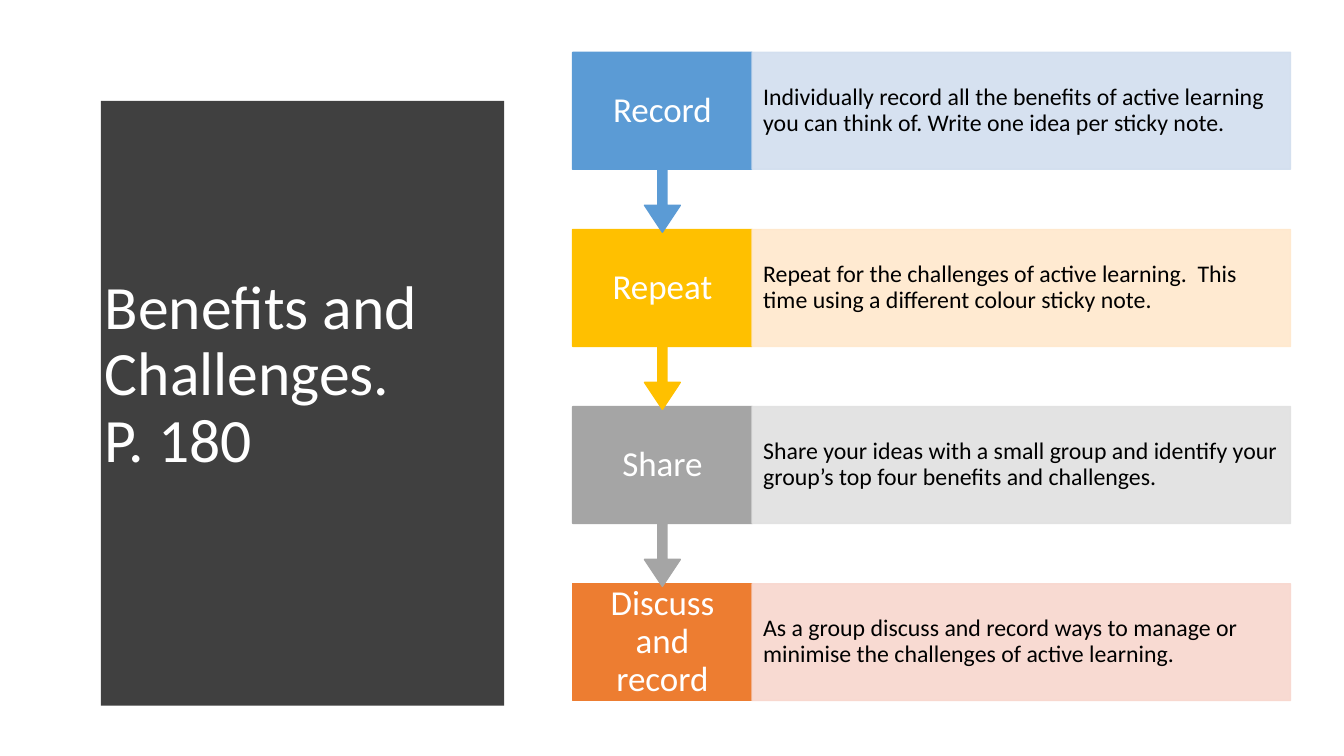
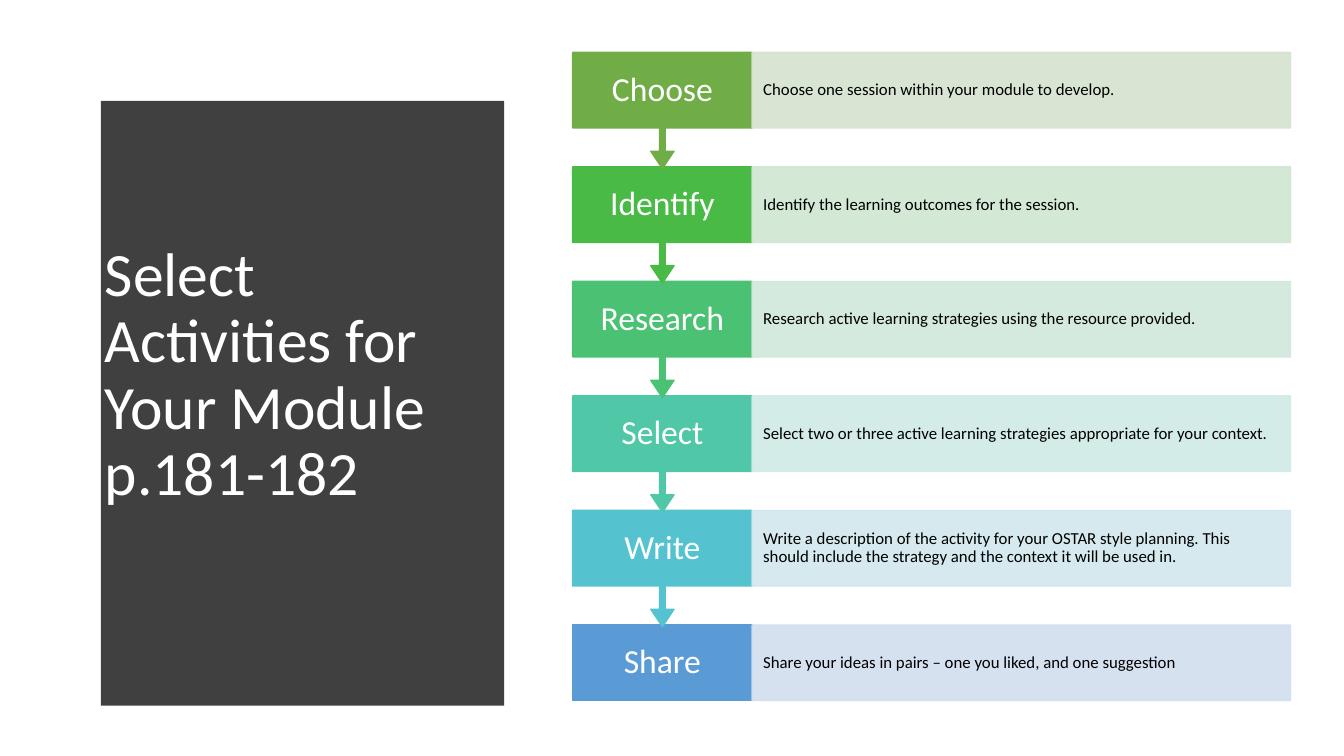
from lxml import etree
from pptx import Presentation
from pptx.dml.color import RGBColor
from pptx.enum.shapes import MSO_SHAPE
from pptx.enum.text import MSO_ANCHOR, MSO_AUTO_SIZE, PP_ALIGN
from pptx.oxml.ns import qn
from pptx.util import Inches, Pt

RECT, CALLOUT = MSO_SHAPE.RECTANGLE, MSO_SHAPE.DOWN_ARROW_CALLOUT
MIDDLE, LEFT, CENTER = MSO_ANCHOR.MIDDLE, PP_ALIGN.LEFT, PP_ALIGN.CENTER
NO_FIT = MSO_AUTO_SIZE.NONE

FONT = "Calibri"
COLORS = {
    "panel": "404040", "white": "FFFFFF", "black": "000000",
    "blue": "5B9BD5", "pale blue": "D2DEEF",
    "gold": "FFC000", "pale gold": "FFE8CC",
    "gray": "A5A5A5", "pale gray": "E1E1E1",
    "orange": "ED7D31", "pale orange": "F8D7CE",
    "olive": "70AD47", "pale olive": "D5E3CF",
    "green": "4ABA46", "pale green": "CFE6D1",
    "jade": "4BC174", "pale jade": "D0E8DB",
    "teal": "50C8A7", "pale teal": "D0EBE6",
    "cyan": "55C3CF", "pale cyan": "D1E7ED",
}

SLIDES = [
    {
        "title": "Benefits and Challenges.\vP. 180",
        "label_size": 25, "detail_size": 17,
        "steps": [
            ("Record", "blue", "Individually record all the benefits of active learning "
             "you can think of. Write one idea per sticky note."),
            ("Repeat", "gold", "Repeat for the challenges of active learning.  This time "
             "using a different colour sticky note."),
            ("Share", "gray", "Share your ideas with a small group and identify your "
             "group’s top four benefits and challenges."),
            ("Discuss and record", "orange", "As a group discuss and record ways to "
             "manage or minimise the challenges of active learning."),
        ],
    },
    {
        "title": "Select Activities for Your Module p.181-182",
        "label_size": 24, "detail_size": 12,
        "steps": [
            ("Choose", "olive", "Choose one session within your module to develop."),
            ("Identify", "green", "Identify the learning outcomes for the session."),
            ("Research", "jade", "Research active learning strategies using the "
             "resource provided."),
            ("Select", "teal", "Select two or three active learning strategies "
             "appropriate for your context."),
            ("Write", "cyan", "Write a description of the activity for your OSTAR style "
             "planning. This should include the strategy and the context it will be used in."),
            ("Share", "blue", "Share your ideas in pairs – one you liked, and one suggestion"),
        ],
    },
]

TOP, BOTTOM = 0.52, 6.95
PANEL_LEFT, PANEL_EDGE, PANEL_BULGE = 0.53, 5.08, 0.24
CURVE_PARTS = 40
TITLE_BOX = (0.94, 1.11, 3.74, 5.24)
STEPS_LEFT, STEPS_WIDTH, LABEL_SHARE = 5.68, 7.12, 0.25
GAP_SHARE = 0.515
CALLOUT_ADJUSTMENTS = (0.05, 0.1, 0.15, 0.65)


def rgb(name):
    return RGBColor.from_string(COLORS[name])


def write(sp, text, size, color, align, margins):
    tf = sp.text_frame
    tf.text = text
    tf.word_wrap = True
    tf.auto_size = NO_FIT
    tf.vertical_anchor = MIDDLE
    tf.margin_left = tf.margin_right = Inches(margins[0])
    tf.margin_top = tf.margin_bottom = Inches(margins[1])
    p = tf.paragraphs[0]
    p.alignment = align
    p.line_spacing = 0.9
    for r in p.runs:
        r.font.size = Pt(size)
        r.font.name = FONT
        r.font.color.rgb = rgb(color)


def add_block(s, kind, box, color, opacity=100):
    sp = s.shapes.add_shape(kind, *map(Inches, box))
    sp.shadow.inherit = False
    sp.fill.solid()
    sp.fill.fore_color.rgb = rgb(color)
    sp.line.color.rgb = rgb(color)
    sp.line.width = Pt(1)
    if opacity < 100:
        for clr in sp.element.spPr.iter(qn("a:srgbClr")):
            etree.SubElement(clr, qn("a:alpha"), val=str(opacity * 1000))
    return sp


def add_panel(s):
    points = []
    for i in range(CURVE_PARTS + 1):
        t = i / CURVE_PARTS
        x = PANEL_EDGE + PANEL_BULGE * (1 - (2 * t - 1) ** 2)
        points.append((x, TOP + t * (BOTTOM - TOP)))
    builder = s.shapes.build_freeform(PANEL_LEFT, TOP, scale=Inches(1))
    builder.add_line_segments(points + [(PANEL_LEFT, BOTTOM)], close=True)
    sp = builder.convert_to_shape()
    sp.shadow.inherit = False
    sp.fill.solid()
    sp.fill.fore_color.rgb = rgb("panel")
    sp.line.fill.background()
    return sp


def add_title(s, text):
    panel = add_panel(s)
    title = s.shapes.title
    panel.element.addnext(title.element)
    title.left, title.top, title.width, title.height = map(Inches, TITLE_BOX)
    write(title, text, 44, "white", LEFT, (0.1, 0.05))


def add_steps(s, steps, label_size, detail_size):
    n = len(steps)
    height = (BOTTOM - TOP) / (n + GAP_SHARE * (n - 1))
    pitch = height * (1 + GAP_SHARE)
    label_width = STEPS_WIDTH * LABEL_SHARE
    for i, (label, color, detail) in reversed(list(enumerate(steps))):
        y = TOP + i * pitch
        last = i == n - 1
        label_height = height if last else height / CALLOUT_ADJUSTMENTS[-1]
        sp = add_block(s, RECT if last else CALLOUT,
                       (STEPS_LEFT, y, label_width, label_height), color)
        if not last:
            for j, value in enumerate(CALLOUT_ADJUSTMENTS):
                sp.adjustments[j] = value
        write(sp, label, label_size, "white", CENTER, (0.13, 0.1))
        sp = add_block(s, RECT, (STEPS_LEFT + label_width, y,
                                 STEPS_WIDTH - label_width, height), "pale " + color, 90)
        write(sp, detail, detail_size, "black", LEFT, (0.11, 0.17))


def main():
    prs = Presentation()
    prs.slide_width, prs.slide_height = Inches(13.33), Inches(7.5)
    for content in SLIDES:
        s = prs.slides.add_slide(prs.slide_layouts[5])
        add_title(s, content["title"])
        add_steps(s, content["steps"], content["label_size"], content["detail_size"])
    prs.save("out.pptx")


if __name__ == "__main__":
    main()
